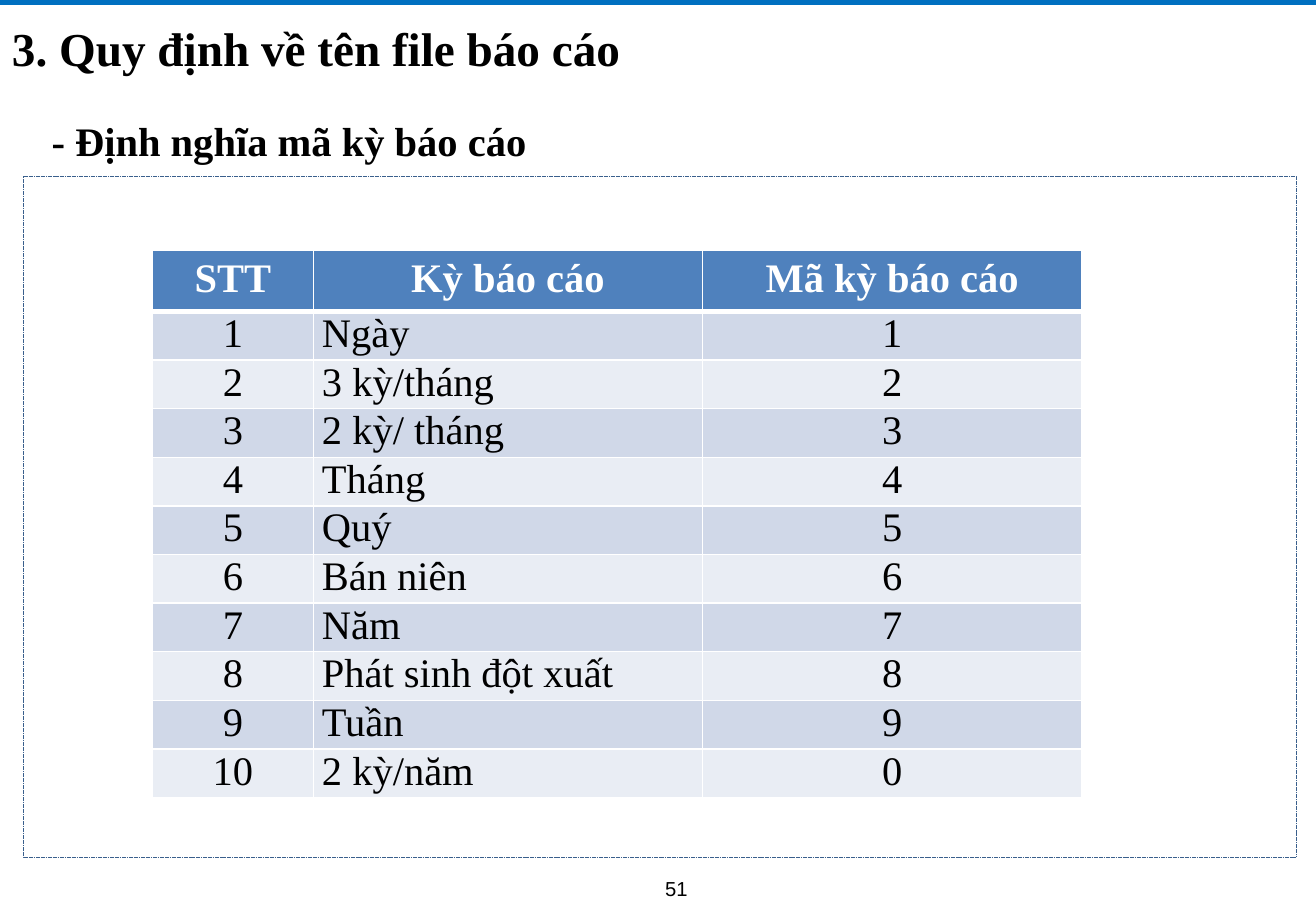
from pptx import Presentation
from pptx.dml.color import RGBColor
from pptx.enum.dml import MSO_LINE as Dash
from pptx.enum.shapes import MSO_SHAPE as Shape
from pptx.enum.text import MSO_ANCHOR as Anchor, PP_ALIGN as Align
from pptx.oxml import parse_xml
from pptx.oxml.ns import nsdecls
from pptx.util import Pt


def color(code):
    return RGBColor.from_string(code)


class Page:
    serif = "Times New Roman"
    sans = "Arial"
    ink = "000000"
    white = "FFFFFF"
    head = "4F81BD"
    bands = ("D0D8E8", "E9EDF4")

    def __init__(self, deck):
        self.slide = deck.slides.add_slide(deck.slide_layouts[6])

    def fill_text(self, frame, text, size, tint=ink, bold=False, align=Align.LEFT, face=serif):
        para = frame.paragraphs[0]
        para.text = text
        para.alignment = align
        font = para.font
        font.name, font.size, font.bold = face, Pt(size), bold
        font.color.rgb = color(tint)

    def label(self, area, text, size, wrap=True, **style):
        frame = self.slide.shapes.add_textbox(*map(Pt, area)).text_frame
        frame.word_wrap = wrap
        frame.vertical_anchor = Anchor.MIDDLE
        self.fill_text(frame, text, size, **style)

    def rect(self, area, fill=None, line=None):
        box = self.slide.shapes.add_shape(Shape.RECTANGLE, *map(Pt, area))
        box.shadow.inherit = False
        if fill:
            box.fill.solid()
            box.fill.fore_color.rgb = color(fill)
        else:
            box.fill.background()
        if line:
            box.line.color.rgb = color(line)
            box.line.width = Pt(0.25)
            box.line.dash_style = Dash.SQUARE_DOT
        else:
            box.line.fill.background()

    def edge(self, cell, side, width):
        cell._tc.get_or_add_tcPr().append(parse_xml(
            f'<a:ln{side} {nsdecls("a")} w="{Pt(width)}"><a:solidFill>'
            f'<a:srgbClr val="{self.white}"/></a:solidFill></a:ln{side}>'))

    def cell(self, cell, row, col, text):
        top = row == 0
        for side in "LRTB":
            thick = (row, side) in ((0, "B"), (1, "T"))
            self.edge(cell, side, 3 if thick else 1)
        cell.fill.solid()
        cell.fill.fore_color.rgb = color(self.head if top else self.bands[(row - 1) % 2])
        cell.margin_left = cell.margin_right = Pt(7.2 if top else 5)
        cell.margin_top = cell.margin_bottom = Pt(3.6 if top else 0)
        self.fill_text(cell.text_frame, text, 24, self.white if top else self.ink, top,
                       Align.LEFT if col == 1 and not top else Align.CENTER)

    def table(self, left, top, cols, highs, rows):
        area = left, top, sum(cols), sum(highs)
        grid = self.slide.shapes.add_table(len(rows), len(cols), *map(Pt, area)).table
        for col, width in enumerate(cols):
            grid.columns[col].width = Pt(width)
        for row, items in enumerate(rows):
            grid.rows[row].height = Pt(highs[row])
            for col, text in enumerate(items):
                self.cell(grid.cell(row, col), row, col, text)


def main():
    deck = Presentation()
    deck.slide_width, deck.slide_height = Pt(780), Pt(540)
    page = Page(deck)
    page.label((322, 517, 158, 19), "51", 12, align=Align.CENTER, face=page.sans)
    page.rect((0, -0.5, 780, 3.5), fill="0070C0")
    page.rect((14, 104.5, 754.5, 403.5), line="3A5F8C")
    page.label((0, 9.5, 780, 38), "3. Quy định về tên file báo cáo", 28, bold=True)
    terms = ["Ngày", "3 kỳ/tháng", "2 kỳ/ tháng", "Tháng", "Quý", "Bán niên",
             "Năm", "Phát sinh đột xuất", "Tuần", "2 kỳ/năm"]
    rows = [("STT", "Kỳ báo cáo", "Mã kỳ báo cáo")]
    rows += [(str(num), term, str(num % 10)) for num, term in enumerate(terms, 1)]
    page.table(90.3, 148.5, (95.5, 230.5, 225), [33.7] + [26.9] * len(terms), rows)
    page.label((23.5, 65, 299, 36), "- Định nghĩa mã kỳ báo cáo", 24, wrap=False, bold=True)
    deck.save("out.pptx")


if __name__ == "__main__":
    main()
